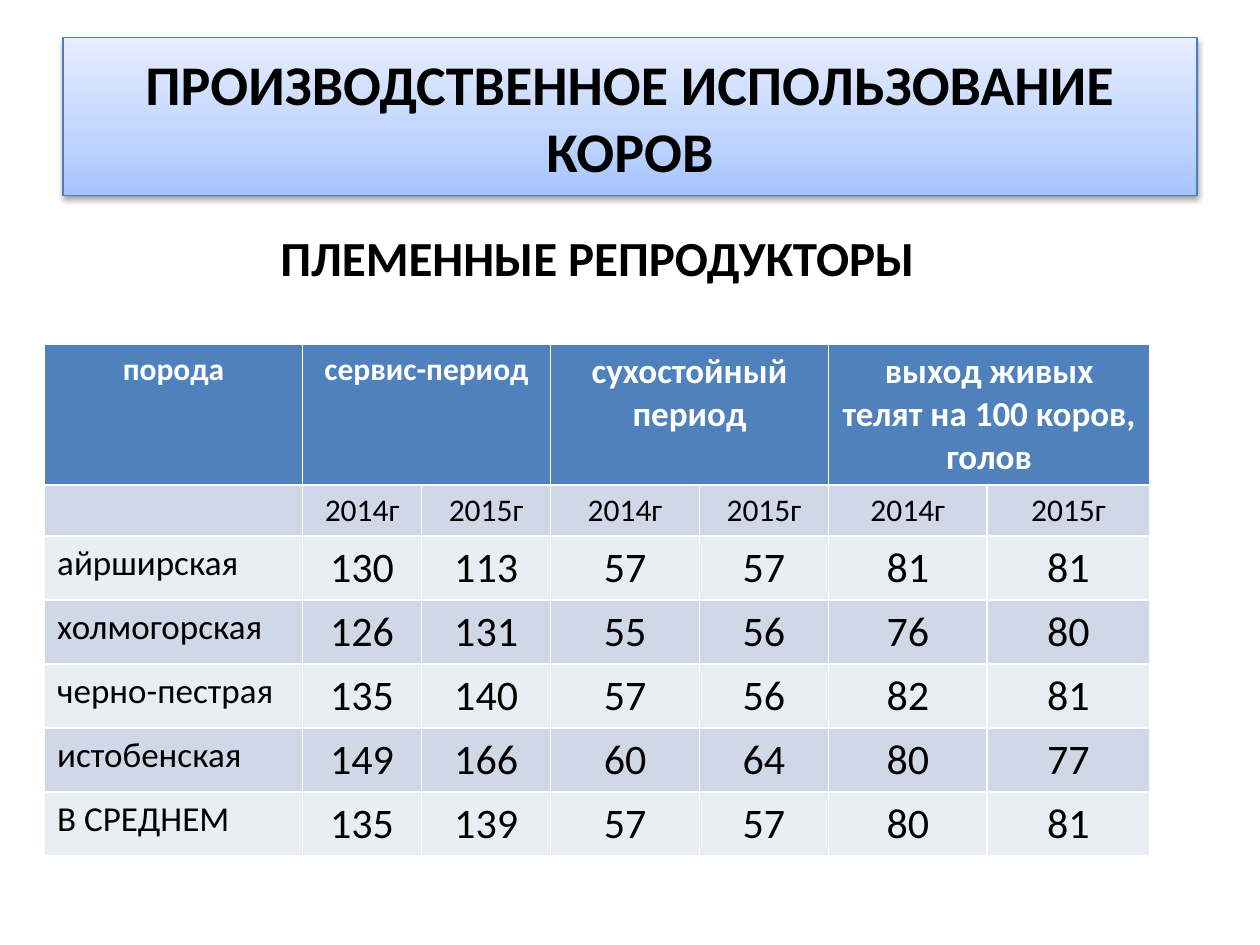
import copy

import pptx
import pptx.dml.color
import pptx.enum.text
import pptx.oxml
import pptx.oxml.ns
import pptx.util

Cm = pptx.util.Cm
Pt = pptx.util.Pt
RGB = pptx.dml.color.RGBColor
ALIGN = pptx.enum.text.PP_ALIGN

BLACK = RGB(0x00, 0x00, 0x00)
WHITE = RGB(0xFF, 0xFF, 0xFF)
BLUE = RGB(0x4F, 0x81, 0xBD)
EDGE = RGB(0x4B, 0x7E, 0xBC)
DARK = RGB(0xD0, 0xD8, 0xE8)
LIGHT = RGB(0xE9, 0xED, 0xF4)
FADE = [
    (0, RGB(0xA4, 0xC4, 0xFF)),
    (0.35, RGB(0xBF, 0xD4, 0xFF)),
    (1, RGB(0xE6, 0xEE, 0xFF)),
]

SHADOW = (
    f'<a:effectLst {pptx.oxml.ns.nsdecls("a")}>'
    '<a:outerShdw blurRad="39370" dist="20320" dir="5400000" rotWithShape="0">'
    '<a:srgbClr val="000000"><a:alpha val="38000"/></a:srgbClr>'
    '</a:outerShdw></a:effectLst>'
)


def write(frame, text, size, color=BLACK, bold=False, align=ALIGN.CENTER):
    frame.text = text
    line = frame.paragraphs[0]
    line.alignment = align
    form = {"name": "Calibri", "size": Pt(size), "bold": bold}
    for key, value in form.items():
        setattr(line.runs[0].font, key, value)
    line.runs[0].font.color.rgb = color


deck = pptx.Presentation()
deck.slide_width = Cm(25.4)
deck.slide_height = Cm(19.05)
slide = deck.slides.add_slide(deck.slide_layouts[5])

# Title bar
title = slide.shapes.title
place = {"left": Cm(1.27), "top": Cm(0.76), "width": Cm(22.86), "height": Cm(3.18)}
for key, value in place.items():
    setattr(title, key, value)
write(title.text_frame, "ПРОИЗВОДСТВЕННОЕ ИСПОЛЬЗОВАНИЕ КОРОВ", 32, bold=True)
title.text_frame.vertical_anchor = pptx.enum.text.MSO_ANCHOR.MIDDLE
title.fill.gradient()
title.fill.gradient_angle = 90
stops = title.element.xpath(".//a:gsLst")[0]
stops.append(copy.deepcopy(stops[0]))
for stop, (where, color) in zip(title.fill.gradient_stops, FADE):
    stop.position = where
    stop.color.rgb = color
title.line.color.rgb = EDGE
title.line.width = Pt(0.75)
title.element.spPr.append(pptx.oxml.parse_xml(SHADOW))

# Table
heads = ["сервис-период", "сухостойный период", "выход живых телят на 100 коров, голов"]
breeds = {
    "айрширская": [130, 113, 57, 57, 81, 81],
    "холмогорская": [126, 131, 55, 56, 76, 80],
    "черно-пестрая": [135, 140, 57, 56, 82, 81],
    "истобенская": [149, 166, 60, 64, 80, 77],
    "В СРЕДНЕМ": [135, 139, 57, 57, 80, 81],
}
widths = [5.2, 2.4, 2.6, 3, 2.6, 3.2, 3.28]
heights = [2.83, 1.03] + [1.29] * len(breeds)
grid = slide.shapes.add_table(
    len(heights), len(widths), Cm(0.9), Cm(6.93), Cm(sum(widths)), Cm(sum(heights))
).table
for col, width in zip(grid.columns, widths):
    col.width = Cm(width)
for num, height in enumerate(heights):
    grid.rows[num].height = Cm(height)
    for cell in grid.rows[num].cells:
        cell.fill.solid()
        cell.fill.fore_color.rgb = BLUE if num == 0 else DARK if num % 2 else LIGHT

write(grid.cell(0, 0).text_frame, "порода", 18, WHITE, True)
for num, head in enumerate(heads):
    left = 2 * num + 1
    grid.cell(0, left).merge(grid.cell(0, left + 1))
    write(grid.cell(0, left).text_frame, head, 20 if num else 18, WHITE, True)
    for step, year in enumerate(["2014г", "2015г"]):
        write(grid.cell(1, left + step).text_frame, year, 18)
for row, (breed, values) in enumerate(breeds.items(), 2):
    write(grid.cell(row, 0).text_frame, breed, 20, align=ALIGN.LEFT)
    for col, value in enumerate(values, 1):
        write(grid.cell(row, col).text_frame, str(value), 24)

# Subtitle
label = slide.shapes.add_textbox(Cm(3.58), Cm(4.47), Cm(16.92), Cm(1.45))
label.text_frame.word_wrap = True
write(label.text_frame, "ПЛЕМЕННЫЕ РЕПРОДУКТОРЫ", 28, bold=True)

deck.save("out.pptx")
